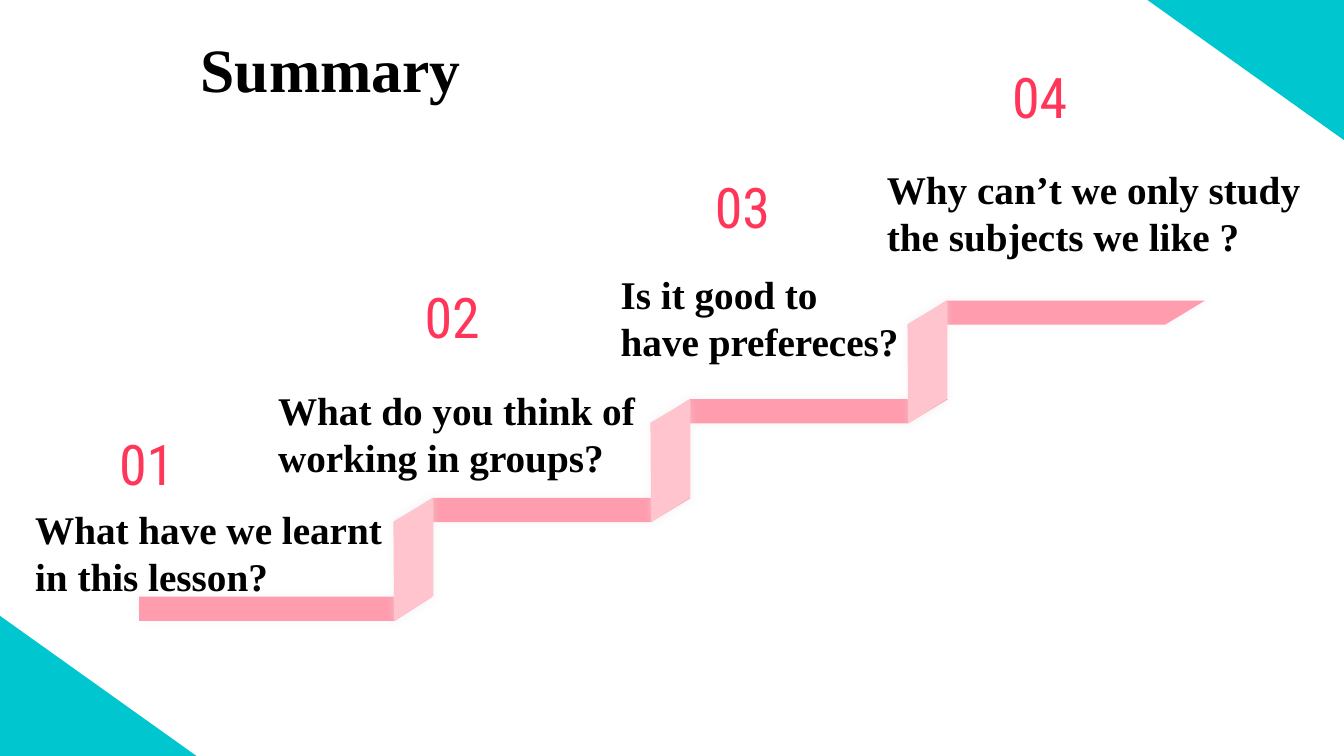
from lxml import etree
from pptx import Presentation
from pptx import util as u
from pptx.dml.color import RGBColor
from pptx.enum import shapes, text
from pptx.oxml import ns

Pt = u.Pt
TEAL, RED, PINK, PALE_PINK, BLACK, SHADOW = (
    "00C6CF", "FF3659", "FF9DAE", "FFC4CE", "000000", "ECECEC")
SERIF, CONDENSED = "Times New Roman", "Roboto Condensed"
RUN, RISE = 183.6, 70.5  # offset from one step to the next

FIRST_TREAD = [(99.4, 426.2), (309, 426.2), (282, 443.5), (99.4, 443.5)]
TREAD = [(281.5, 373), (309, 355.7), (493.6, 355.7), (465, 373)]
RISER = [(281.5, 443.5), (309.5, 425.5), (309.5, 355.7), (281, 372.5)]

NUMBERS = [(39.6, 311.8), (257.8, 206.6), (465.1, 128.2), (677.5, 49.7)]
QUESTIONS = [
    ((18, 357.1, 272.9, 74.9), ["What have we learnt", "in this lesson?"], True),
    ((191.5, 272.2, 323.3, 74.9), ["What do you think of working in groups?"], True),
    ((436.3, 189.4, 213.1, 74.9), ["Is it good to", "have prefereces?"], False),
    ((626.4, 114.5, 333.4, 74.9), ["Why can’t we only study the subjects we like ?"], True),
]


def color(value):
    return RGBColor.from_string(value)


def shifted(points, step):
    return [(x + step * RUN, y - step * RISE) for x, y in points]


class SlideBuilder:
    def __init__(self, slide):
        self.slide = slide

    def paint(self, shape, fill):
        shape.shadow.inherit = False
        shape.fill.solid()
        shape.fill.fore_color.rgb = color(fill)
        shape.line.fill.background()

    def corner(self, left, top, rotation):
        shape = self.slide.shapes.add_shape(
            shapes.MSO_SHAPE.RIGHT_TRIANGLE, Pt(left), Pt(top), Pt(140.4), Pt(100.1))
        shape.rotation = rotation
        self.paint(shape, TEAL)

    def panel(self, points, fill):
        """Draw one face of the staircase with a soft shadow."""
        corners = [(Pt(x), Pt(y)) for x, y in points]
        builder = self.slide.shapes.build_freeform(*corners[0])
        builder.add_line_segments(corners[1:], close=True)
        shape = builder.convert_to_shape()
        self.paint(shape, fill)
        effects = shape._element.spPr.find(ns.qn("a:effectLst"))
        shadow = etree.SubElement(effects, ns.qn("a:outerShdw"), blurRad=str(Pt(5)))
        tint = etree.SubElement(shadow, ns.qn("a:srgbClr"), val=SHADOW)
        etree.SubElement(tint, ns.qn("a:alpha"), val="40000")

    def set_text(self, shape, lines, size, font, fill, bold=False,
                 align=text.PP_ALIGN.LEFT):
        frame = shape.text_frame
        frame.text = "\n".join(lines)
        for paragraph in frame.paragraphs:
            paragraph.alignment = align
            paragraph.font.size = Pt(size)
            paragraph.font.name = font
            paragraph.font.bold = bold
            paragraph.font.color.rgb = color(fill)

    def title(self, box, words):
        shape = self.slide.shapes.title
        shape.left, shape.top, shape.width, shape.height = map(Pt, box)
        self.set_text(shape, [words], 44, SERIF, BLACK, bold=True)
        frame = shape.text_frame
        frame.word_wrap = False
        frame.auto_size = text.MSO_AUTO_SIZE.NONE
        frame.vertical_anchor = text.MSO_ANCHOR.TOP

    def number(self, left, top, words):
        shape = self.slide.shapes.add_textbox(Pt(left), Pt(top), Pt(130.3), Pt(34.6))
        frame = shape.text_frame
        frame.word_wrap = True
        frame.vertical_anchor = text.MSO_ANCHOR.MIDDLE
        frame.margin_left = frame.margin_right = frame.margin_bottom = 0
        self.set_text(shape, [words], 40, CONDENSED, RED, align=text.PP_ALIGN.CENTER)

    def question(self, box, lines, wrap):
        shape = self.slide.shapes.add_textbox(*map(Pt, box))
        shape.text_frame.word_wrap = wrap
        self.set_text(shape, lines, 28, SERIF, BLACK, bold=True)


def main():
    presentation = Presentation()
    presentation.slide_width, presentation.slide_height = Pt(960), Pt(540)
    slide = presentation.slides.add_slide(presentation.slide_layouts[5])
    builder = SlideBuilder(slide)

    builder.corner(819.6, 0, 180)
    builder.corner(0, 439.9, 0)

    builder.panel(FIRST_TREAD, PINK)
    for points, fill in ((TREAD, PINK), (RISER, PALE_PINK)):
        for step in range(3):
            builder.panel(shifted(points, step), fill)

    for index, (left, top) in enumerate(NUMBERS, start=1):
        builder.number(left, top, f"{index:02d}")
    builder.title((136.1, 18.7, 202.3, 60.5), "Summary")
    for box, lines, wrap in QUESTIONS:
        builder.question(box, lines, wrap)

    presentation.save("out.pptx")


if __name__ == "__main__":
    main()
